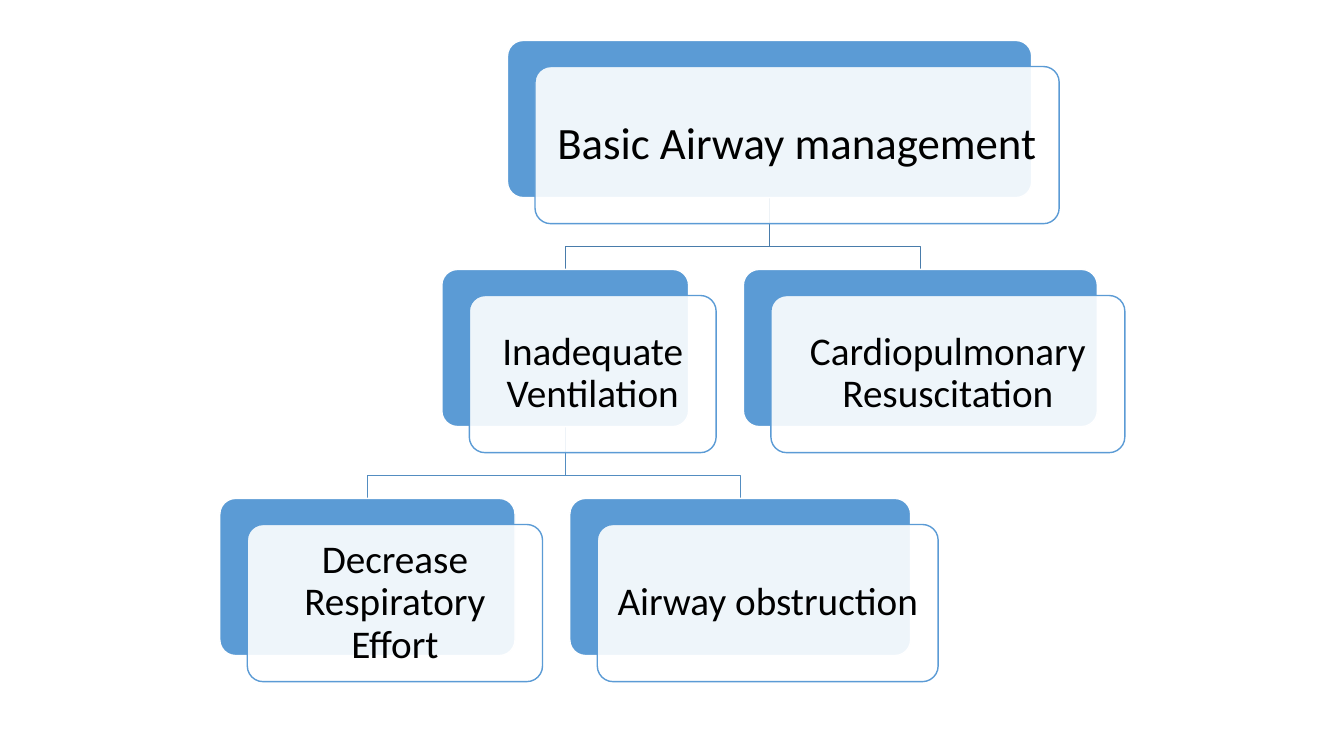
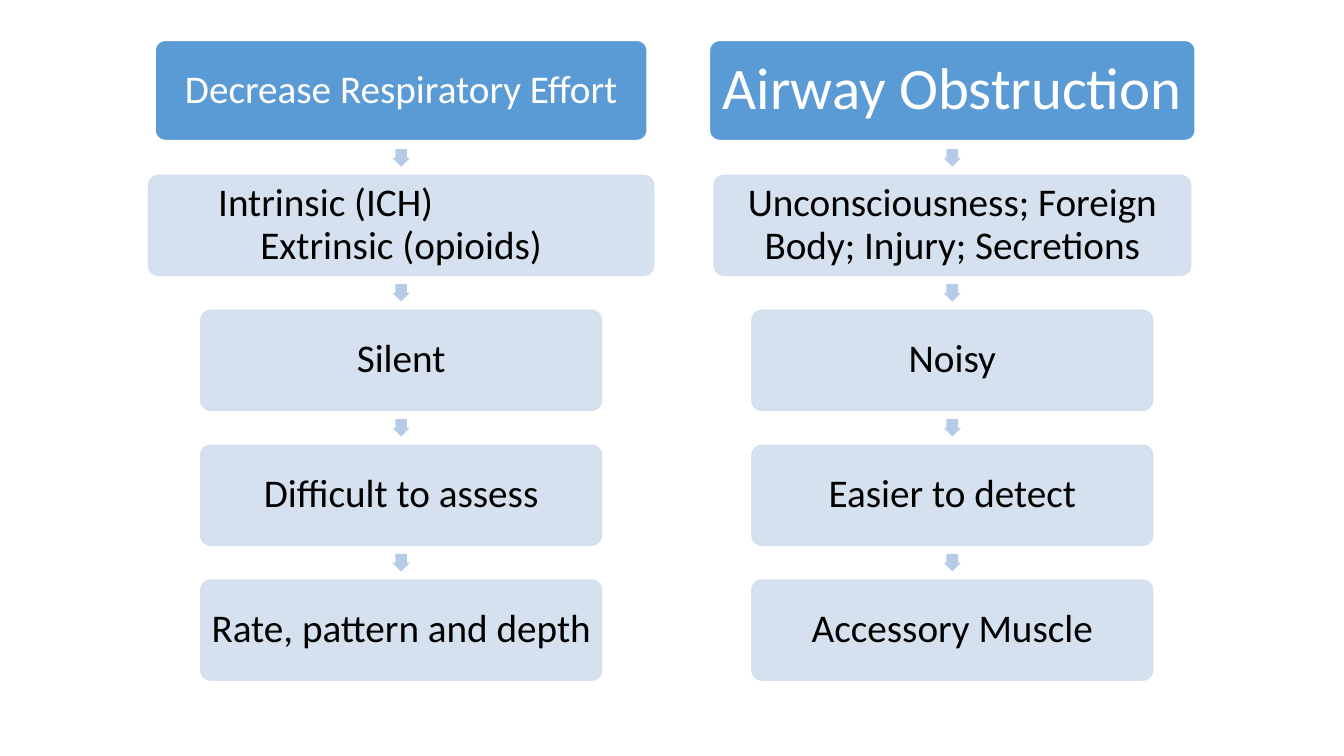
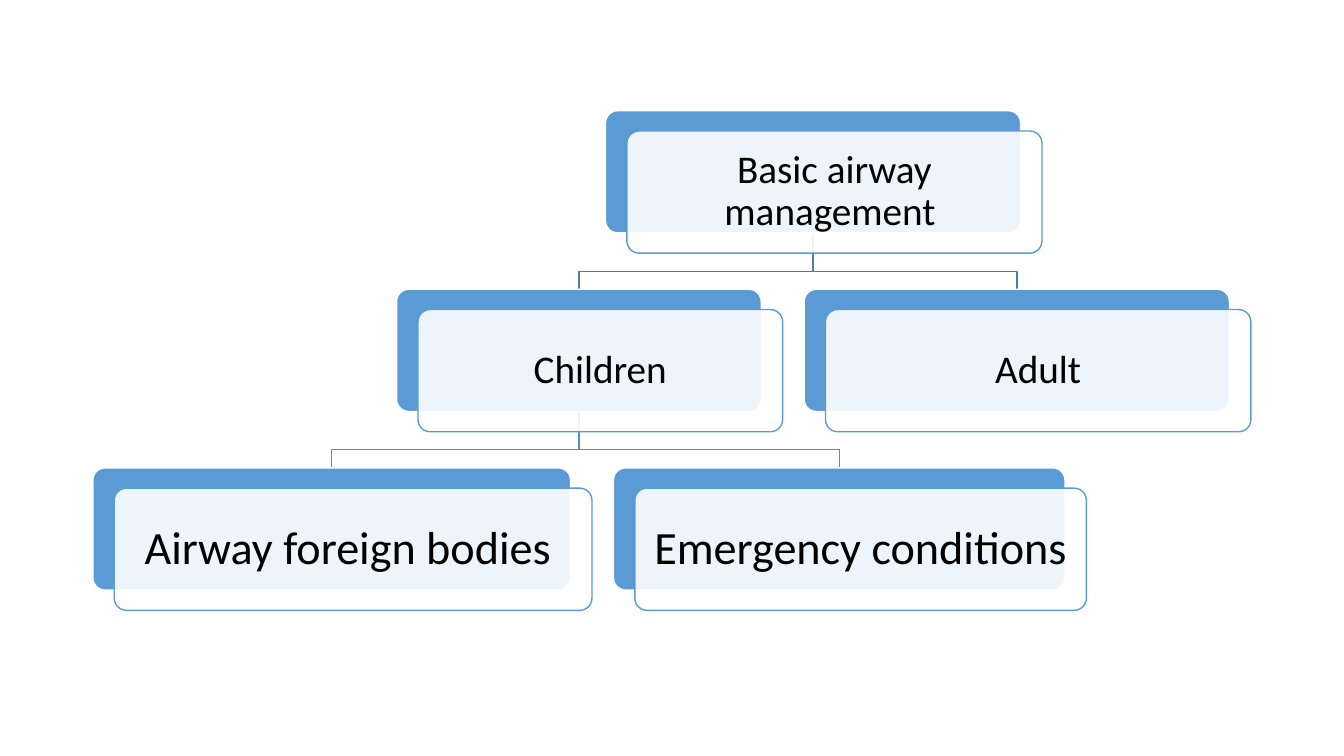
from lxml import etree
from pptx import Presentation
from pptx.dml.color import RGBColor
from pptx.enum.shapes import MSO_SHAPE
from pptx.enum.text import MSO_ANCHOR, PP_ALIGN
from pptx.oxml.ns import qn
from pptx.util import Cm, Pt

ROUND = MSO_SHAPE.ROUNDED_RECTANGLE
ARROW = MSO_SHAPE.DOWN_ARROW
MIDDLE = MSO_ANCHOR.MIDDLE
CENTER = PP_ALIGN.CENTER
LEFT = PP_ALIGN.LEFT

FONT = "Calibri"
COLORS = {
    "blue": "5B9BD5",
    "pale": "D2DEEF",
    "arrow": "B5CBE7",
    "upper": "497CAB",
    "lower": "538DC1",
    "white": "FFFFFF",
    "black": "000000",
}


def rgb(name):
    return RGBColor.from_string(COLORS[name])


def fade(part):
    for color in part.iter(qn("a:srgbClr")):
        etree.SubElement(color, qn("a:alpha")).set("val", "90000")


def paint(shape, fill, line):
    shape.shadow.inherit = False
    shape.fill.solid()
    shape.fill.fore_color.rgb = rgb(fill)
    if line:
        shape.line.color.rgb = rgb(line)
        shape.line.width = Pt(1)
    else:
        shape.line.fill.background()


def add_box(slide, left, top, width, height, fill, line):
    box = slide.shapes.add_shape(ROUND, Cm(left), Cm(top), Cm(width), Cm(height))
    box.adjustments[0] = 0.1
    paint(box, fill, line)
    return box


def write(box, text, size, color, pad):
    frame = box.text_frame
    frame.word_wrap = True
    frame.vertical_anchor = MIDDLE
    frame.margin_left = frame.margin_right = Cm(pad)
    frame.margin_top = frame.margin_bottom = Cm(pad)
    frame.text = text
    for para in frame.paragraphs:
        para.alignment = CENTER
        para.line_spacing = 0.9
        for run in para.runs:
            run.font.name = FONT
            run.font.size = Pt(size)
            run.font.color.rgb = rgb(color)


def add_link(slide, start, end, color):
    (x, y), (to_x, to_y) = start, end
    bend = to_y - 0.32 * (to_y - y)
    points = [(x, bend), (to_x, bend), (to_x, to_y)]
    path = slide.shapes.build_freeform(Cm(x), Cm(y))
    path.add_line_segments([(Cm(a), Cm(b)) for a, b in points], close=False)
    link = path.convert_to_shape()
    link.shadow.inherit = False
    link.fill.background()
    link.line.color.rgb = rgb(color)
    link.line.width = Pt(1)


def add_card(slide, left, top, width, height, text, size):
    add_box(slide, left, top, width, height, "blue", "white")
    front = add_box(slide, left + 0.175 * height, top + 0.166 * height,
                    width, height, "white", "blue")
    fade(front.fill._xPr.find(qn("a:solidFill")))
    write(front, text, size, "black", 0.0108 * size)


def place_rows(rows, left, gap):
    placed = []
    for row in reversed(rows):
        if placed:
            below = placed[0]
            span = below[-1][0] + below[-1][1] - below[0][0]
            left = below[0][0] + (span - row[0][1]) / 2
        spots = []
        for text, width, size in row:
            spots.append((left, width, text, size))
            left += width + gap
        placed.insert(0, spots)
    return placed


def add_tree(slide, rows, left, top, height, step, gap):
    placed = place_rows(rows, left, gap)
    for level, color in enumerate(("upper", "lower")):
        head = placed[level][0]
        y = top + level * step
        start = (head[0] + head[1] / 2, y + height)
        for child in reversed(placed[level + 1]):
            end = (child[0] + child[1] / 2, y + step)
            add_link(slide, start, end, color)
    for level, row in enumerate(placed):
        for x, width, text, size in row:
            add_card(slide, x, top + level * step, width, height, text, size)


def add_chain(slide, center, steps):
    top, height, step, tip = 1.02, 2.52, 3.4, 0.44
    boxes = []
    for index, (text, width, size) in enumerate(steps):
        y = top + index * step
        fill, line, ink = ("pale", "pale", "black") if index else ("blue", "white", "white")
        box = add_box(slide, center - width / 2, y, width, height, fill, line)
        if index:
            fade(box._element.spPr)
            arrow = slide.shapes.add_shape(
                ARROW, Cm(center - tip / 2), Cm(y - (step - height + tip) / 2),
                Cm(tip), Cm(tip))
            arrow.adjustments[0] = 0.667
            paint(arrow, "arrow", None)
        write(box, text, size, ink, 0.0036 * size)
        boxes.append(box)
    return boxes


def main():
    deck = Presentation()
    deck.slide_width = Cm(33.87)
    deck.slide_height = Cm(19.05)
    blank = deck.slide_layouts[6]

    slide = deck.slides.add_slide(blank)
    add_tree(slide, [
        [("Basic Airway management", 13.21, 32)],
        [("Inadequate Ventilation", 6.22, 28),
         ("Cardiopulmonary Resuscitation", 8.92, 28)],
        [("Decrease Respiratory Effort", 7.44, 28),
         ("Airway obstruction", 8.59, 28)],
    ], left=5.54, top=1.02, height=3.96, step=5.77, gap=1.38)

    slide = deck.slides.add_slide(blank)
    effort = add_chain(slide, 10.11, [
        ("Decrease Respiratory Effort", 12.4, 28),
        ("Intrinsic (ICH)\nExtrinsic (opioids)", 12.73, 28),
        ("Silent", 10.1, 28),
        ("Difficult to assess", 10.1, 28),
        ("Rate, pattern and depth", 10.1, 28),
    ])
    first = effort[1].text_frame.paragraphs[0]
    first.alignment = LEFT
    first._p.get_or_add_pPr().set("marL", str(Cm(1.58)))
    add_chain(slide, 24, [
        ("Airway Obstruction", 12.24, 42),
        ("Unconsciousness; Foreign Body; Injury; Secretions", 12.01, 28),
        ("Noisy", 10.1, 28),
        ("Easier to detect", 10.1, 28),
        ("Accessory Muscle", 10.1, 28),
    ])

    slide = deck.slides.add_slide(blank)
    add_tree(slide, [
        [("Basic airway management ", 10.46, 28)],
        [("Children", 9.19, 28), ("Adult", 10.72, 28)],
        [("Airway foreign bodies ", 12.04, 33),
         ("Emergency conditions", 11.38, 33)],
    ], left=2.34, top=2.79, height=3.08, step=4.5, gap=1.08)

    deck.save("out.pptx")


if __name__ == "__main__":
    main()
